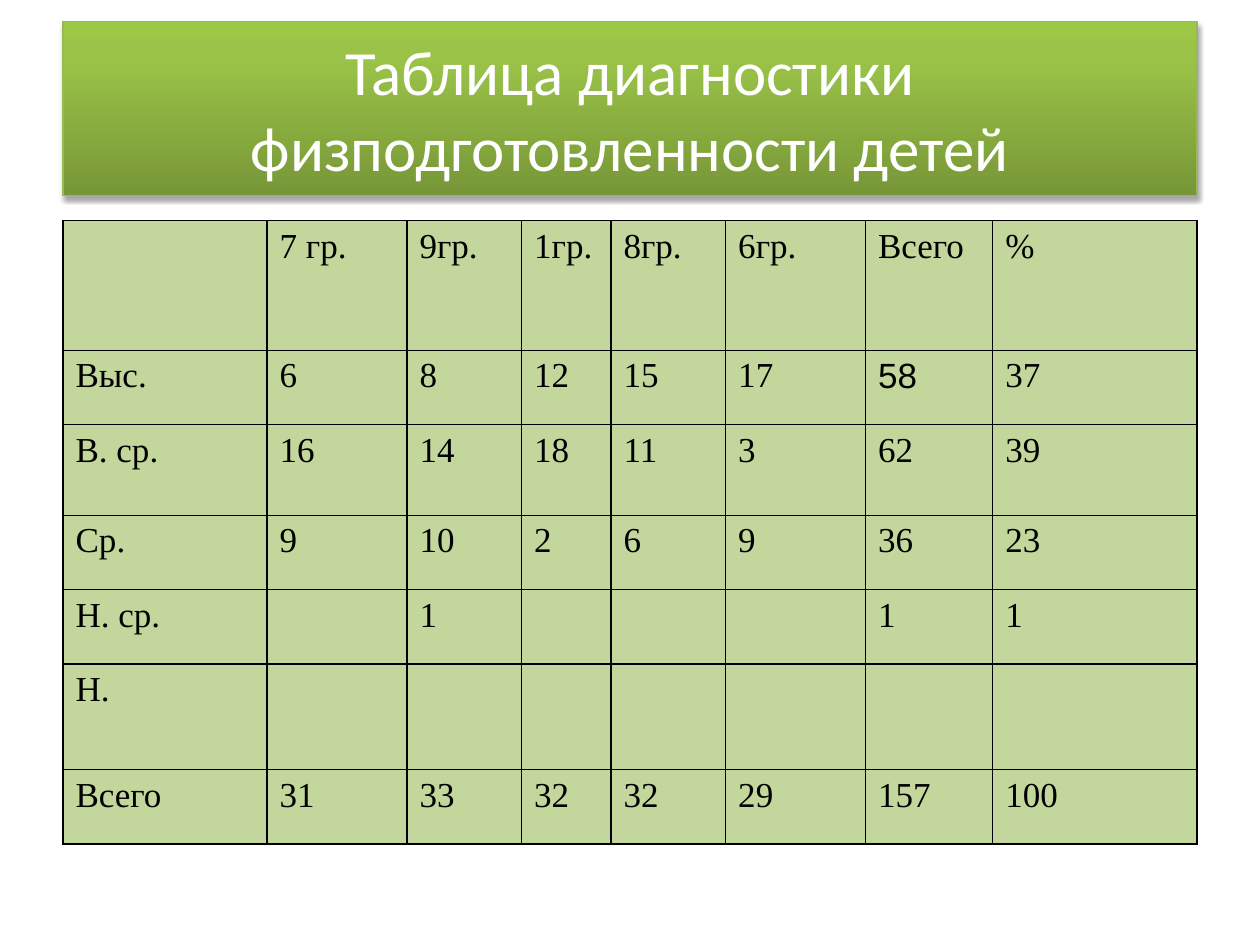
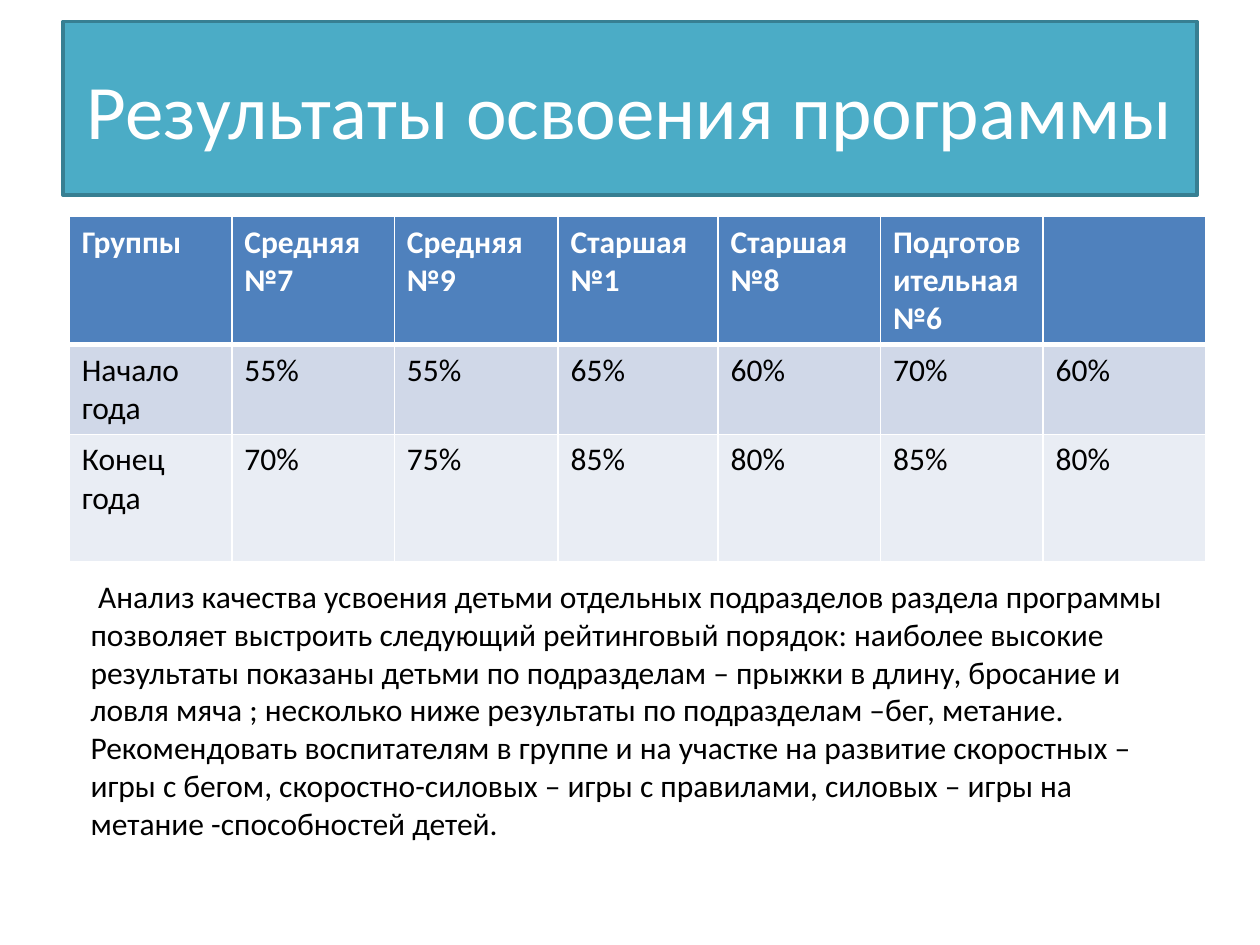
from copy import deepcopy

from lxml.etree import SubElement
from pptx import Presentation
from pptx.dml.color import RGBColor as Rgb
from pptx.enum.text import MSO_ANCHOR as Anchor, MSO_AUTO_SIZE as AutoSize, PP_ALIGN as Align
from pptx.oxml.ns import qn
from pptx.util import Inches, Pt

THEME = {
    "white": "FFFFFF", "black": "000000",
    "green_stops": [(0, "779737"), (0.8, "9BC348"), (1, "9DC746")],
    "green_line": "98B955", "green_cell": "C3D69B",
    "teal": "4BACC6", "teal_line": "377F92",
    "header": "4F81BD", "bands": ["D0D8E8", "E9EDF4"],
    "sans": "Calibri", "serif": "Times New Roman", "plain": "Arial",
    "long_title": 36, "short_title": 44, "diagnostics": 20, "body": 18,
}
TITLE_BOX = (0.5, 0.17, 9, 1.38)
SIDES = ("a:lnL", "a:lnR", "a:lnT", "a:lnB")

DIAGNOSTICS_TITLE = "Таблица диагностики физподготовленности детей"
DIAGNOSTICS = [
    ["", "7 гр.", "9гр.", "1гр.", "8гр.", "6гр.", "Всего", "%"],
    ["Выс.", "6", "8", "12", "15", "17", "58", "37"],
    ["В. ср.", "16", "14", "18", "11", "3", "62", "39"],
    ["Ср.", "9", "10", "2", "6", "9", "36", "23"],
    ["Н. ср.", "", "1", "", "", "", "1", "1"],
    ["Н.", "", "", "", "", "", "", ""],
    ["Всего", "31", "33", "32", "32", "29", "157", "100"],
]
DIAGNOSTICS_COLUMNS = [1.62, 1.11, 0.91, 0.71, 0.91, 1.11, 1.01, 1.62]
DIAGNOSTICS_ROWS = [1.03, 0.59, 0.72, 0.59, 0.59, 0.84, 0.59]
PLAIN_CELL = (1, 6)

RESULTS_TITLE = "Результаты освоения программы"
RESULTS = [
    ["Группы", "Средняя №7", "Средняя №9", "Старшая №1", "Старшая №8", "Подготовительная №6", ""],
    ["Начало года", "55%", "55%", "65%", "60%", "70%", "60%"],
    ["Конец года", "70%", "75%", "85%", "80%", "85%", "80%"],
]
RESULTS_COLUMNS = [1.29, 1.29, 1.3, 1.27, 1.29, 1.29, 1.29]
RESULTS_ROWS = [1.01, 0.71, 1.01]
ANALYSIS = (
    "Анализ качества усвоения детьми отдельных подразделов раздела программы позволяет "
    "выстроить следующий рейтинговый порядок: наиболее высокие результаты показаны детьми "
    "по подразделам – прыжки в длину, бросание и ловля мяча ; несколько ниже результаты "
    "по подразделам –бег, метание. Рекомендовать воспитателям в группе и на участке на "
    "развитие скоростных – игры с бегом, скоростно-силовых – игры с правилами, силовых – "
    "игры на метание -способностей детей."
)


def color(name):
    return Rgb.from_string(name)


def write(para, text, ink, **formats):
    span = para.add_run()
    span.text = text
    for key, value in formats.items():
        setattr(span.font, key, value)
    span.font.color.rgb = color(ink)


def add_page(deck, title, size, line, width):
    page = deck.slides.add_slide(deck.slide_layouts[5])
    banner = page.shapes.title
    banner.left, banner.top, banner.width, banner.height = map(Inches, TITLE_BOX)
    frame = banner.text_frame
    for key, value in {"word_wrap": True, "auto_size": AutoSize.NONE,
                       "vertical_anchor": Anchor.MIDDLE}.items():
        setattr(frame, key, value)
    frame.paragraphs[0].alignment = Align.CENTER
    write(frame.paragraphs[0], title, THEME["white"], size=Pt(size), name=THEME["sans"])
    banner.line.color.rgb = color(line)
    banner.line.width = Pt(width)
    return page, banner


def fill_gradient(shape, stops):
    shape.fill.gradient()
    shape.fill.gradient_angle = 90
    stop_list = shape.element.spPr.find(qn("a:gradFill")).find(qn("a:gsLst"))
    stop_list.append(deepcopy(stop_list[0]))
    for stop, (position, shade) in zip(shape.fill.gradient_stops, stops):
        stop.position = position
        stop.color.rgb = color(shade)


def add_shadow(shape):
    effects = SubElement(shape.element.spPr, qn("a:effectLst"))
    shadow = SubElement(effects, qn("a:outerShdw"), blurRad=str(Pt(3.1)), dist=str(Pt(1.8)),
                        dir="5400000", rotWithShape="0")
    shade = SubElement(shadow, qn("a:srgbClr"), val=THEME["black"])
    SubElement(shade, qn("a:alpha"), val="35000")


def set_borders(cell, shade, widths):
    properties = cell._tc.get_or_add_tcPr()
    for side, width in zip(SIDES, widths):
        line = SubElement(properties, qn(side), w=str(Pt(width)))
        SubElement(SubElement(line, qn("a:solidFill")), qn("a:srgbClr"), val=shade)


def add_grid(page, place, rows, widths, heights, style):
    area = [Inches(value) for value in (*place, sum(widths), sum(heights))]
    table = page.shapes.add_table(len(rows), len(widths), *area).table
    table.first_row = table.horz_banding = False
    for column, width in zip(table.columns, widths):
        column.width = Inches(width)
    for row, height in zip(table.rows, heights):
        row.height = Inches(height)
    for r, texts in enumerate(rows):
        for c, text in enumerate(texts):
            look = style(r, c)
            cell = table.cell(r, c)
            set_borders(cell, look["border"], look["widths"])
            cell.fill.solid()
            cell.fill.fore_color.rgb = color(look["fill"])
            if text:
                write(cell.text_frame.paragraphs[0], text, look["ink"], **look["font"])


def diagnostics_style(row, column):
    face = THEME["plain"] if (row, column) == PLAIN_CELL else THEME["serif"]
    return {"fill": THEME["green_cell"], "border": THEME["black"], "widths": (1, 1, 1, 1),
            "ink": THEME["black"],
            "font": {"size": Pt(THEME["diagnostics"]), "name": face, "bold": False}}


def results_style(row, column):
    header = row == 0
    return {"fill": THEME["header"] if header else THEME["bands"][row - 1],
            "border": THEME["white"],
            "widths": (1, 1, 3 if row == 1 else 1, 3 if header else 1),
            "ink": THEME["white"] if header else THEME["black"],
            "font": {"size": Pt(THEME["body"]), "name": THEME["sans"], "bold": header}}


def build_diagnostics(deck):
    page, banner = add_page(deck, DIAGNOSTICS_TITLE, THEME["long_title"], THEME["green_line"], 0.75)
    fill_gradient(banner, THEME["green_stops"])
    add_shadow(banner)
    add_grid(page, (0.5, 1.75), DIAGNOSTICS, DIAGNOSTICS_COLUMNS, DIAGNOSTICS_ROWS,
             diagnostics_style)


def build_results(deck):
    page, banner = add_page(deck, RESULTS_TITLE, THEME["short_title"], THEME["teal_line"], 2)
    banner.fill.solid()
    banner.fill.fore_color.rgb = color(THEME["teal"])
    add_grid(page, (0.55, 1.72), RESULTS, RESULTS_COLUMNS, RESULTS_ROWS, results_style)
    box = page.shapes.add_textbox(*map(Inches, (0.62, 4.53, 8.91, 2.52)))
    box.text_frame.word_wrap = True
    para = box.text_frame.paragraphs[0]
    para._p.get_or_add_pPr().set("indent", str(Inches(0.06)))
    write(para, ANALYSIS, THEME["black"], size=Pt(THEME["body"]), name=THEME["sans"])


def main():
    deck = Presentation()
    deck.slide_width, deck.slide_height = Inches(10), Inches(7.5)
    build_diagnostics(deck)
    build_results(deck)
    deck.save("out.pptx")


if __name__ == "__main__":
    main()
